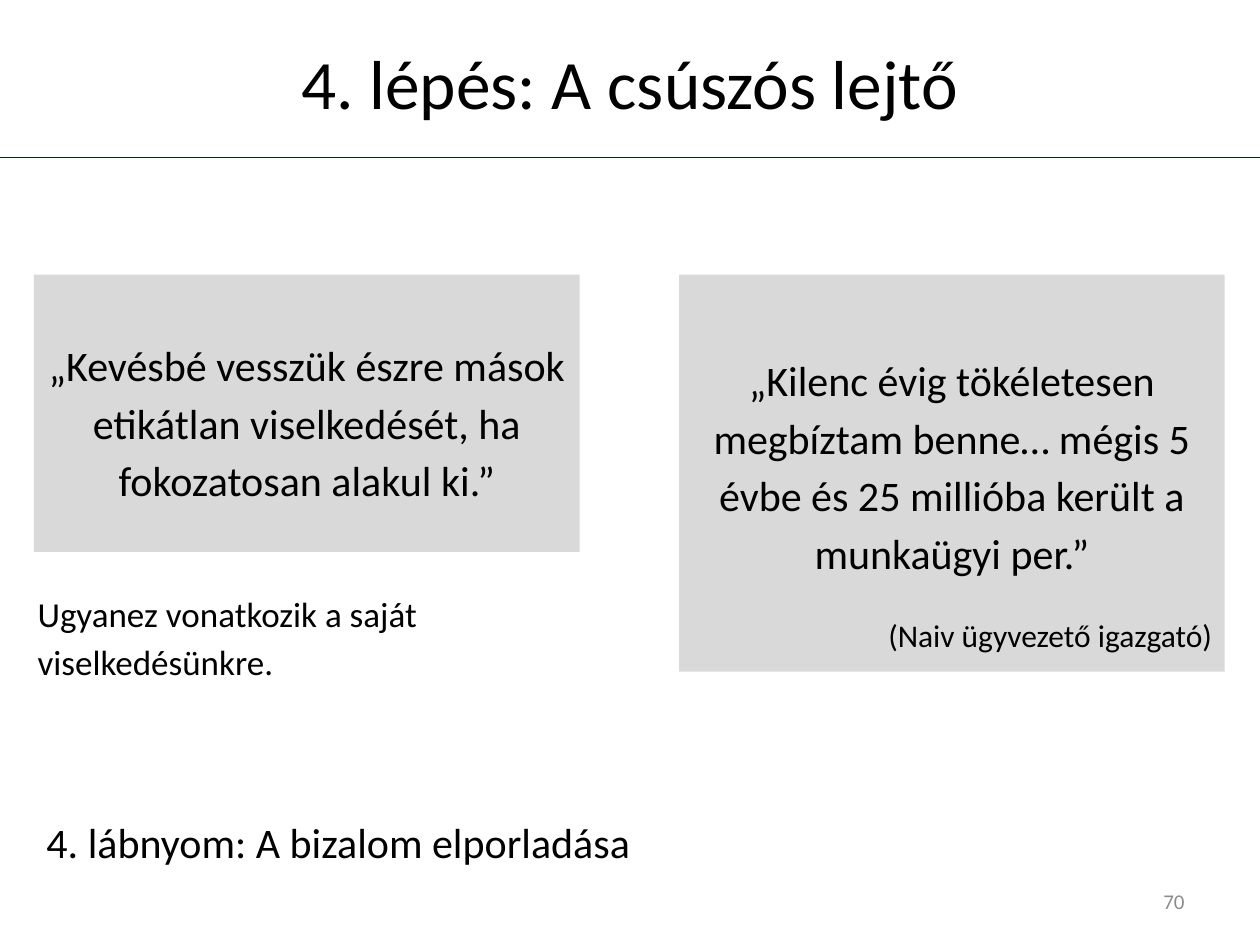
from pptx import Presentation
from pptx.dml.color import RGBColor
from pptx.enum.shapes import MSO_CONNECTOR as Connector, MSO_SHAPE as Shape
from pptx.enum.text import MSO_ANCHOR as Anchor, PP_ALIGN as Align
from pptx.oxml.ns import qn
from pptx.util import Inches, Pt
from lxml.etree import SubElement


def color(value):
    return RGBColor.from_string(value)


def write(box, paras, **frame_format):
    frame = box.text_frame
    frame.word_wrap = True
    for name, value in frame_format.items():
        setattr(frame, name, value)
    for index, (text, size, shade, para_format) in enumerate(paras):
        para = frame.add_paragraph() if index else frame.paragraphs[0]
        for name, value in para_format.items():
            setattr(para, name, value)
        span = para.add_run()
        span.text = text
        span.font.name = "Calibri"
        span.font.size = Pt(size)
        span.font.color.rgb = color(shade)


deck = Presentation()
deck.slide_width, deck.slide_height = Inches(10), Inches(7.5)
page = deck.slides.add_slide(deck.slide_layouts[6])

rule = page.shapes.add_connector(
    Connector.STRAIGHT, 0, Inches(1.25), Inches(10), Inches(1.25))
rule.line.color.rgb = color("003300")
rule.line.width = Pt(1)
SubElement(rule._element.spPr, qn("a:effectLst"))

BLACK = "000000"
SPACING = 1.14
centered = {"alignment": Align.CENTER, "line_spacing": SPACING}
quotes = [
    (5.39, 3.15,
     [("„Kilenc évig tökéletesen megbíztam benne… mégis 5 évbe és 25 millióba "
       "került a munkaügyi per.”", 24, BLACK, centered),
      ("(Naiv ügyvezető igazgató)", 18, BLACK,
       {"alignment": Align.RIGHT, "space_before": Pt(22)})],
     {"margin_top": Inches(0.58)}),
    (0.27, 2.2,
     [("„Kevésbé vesszük észre mások etikátlan viselkedését, ha fokozatosan "
       "alakul ki.”", 24, BLACK, centered)],
     {"margin_top": Inches(0.46), "margin_left": 0, "margin_right": 0}),
]
for left, height, paras, frame_format in quotes:
    panel = page.shapes.add_shape(
        Shape.RECTANGLE, Inches(left), Inches(2.18), Inches(4.33), Inches(height))
    panel.shadow.inherit = False
    panel.fill.solid()
    panel.fill.fore_color.rgb = color("D9D9D9")
    panel.line.fill.background()
    write(panel, paras, vertical_anchor=Anchor.TOP, **frame_format)

labels = [
    ((0.5, 0.3, 9, 0.7), "4. lépés: A csúszós lejtő", 39.6, BLACK,
     {"alignment": Align.CENTER}, Anchor.MIDDLE),
    ((0.2, 4.61, 5, 0.85), "Ugyanez vonatkozik a saját viselkedésünkre.", 20, BLACK,
     {"line_spacing": SPACING}, Anchor.TOP),
    ((0.27, 6.43, 9.45, 0.5), "4. lábnyom: A bizalom elporladása", 24, BLACK,
     {}, Anchor.TOP),
    ((7.17, 6.95, 2.33, 0.4), "70", 12, "8C8C8C",
     {"alignment": Align.RIGHT}, Anchor.MIDDLE),
]
for place, text, size, shade, para_format, anchor in labels:
    box = page.shapes.add_textbox(*map(Inches, place))
    write(box, [(text, size, shade, para_format)], vertical_anchor=anchor)

deck.save("out.pptx")
